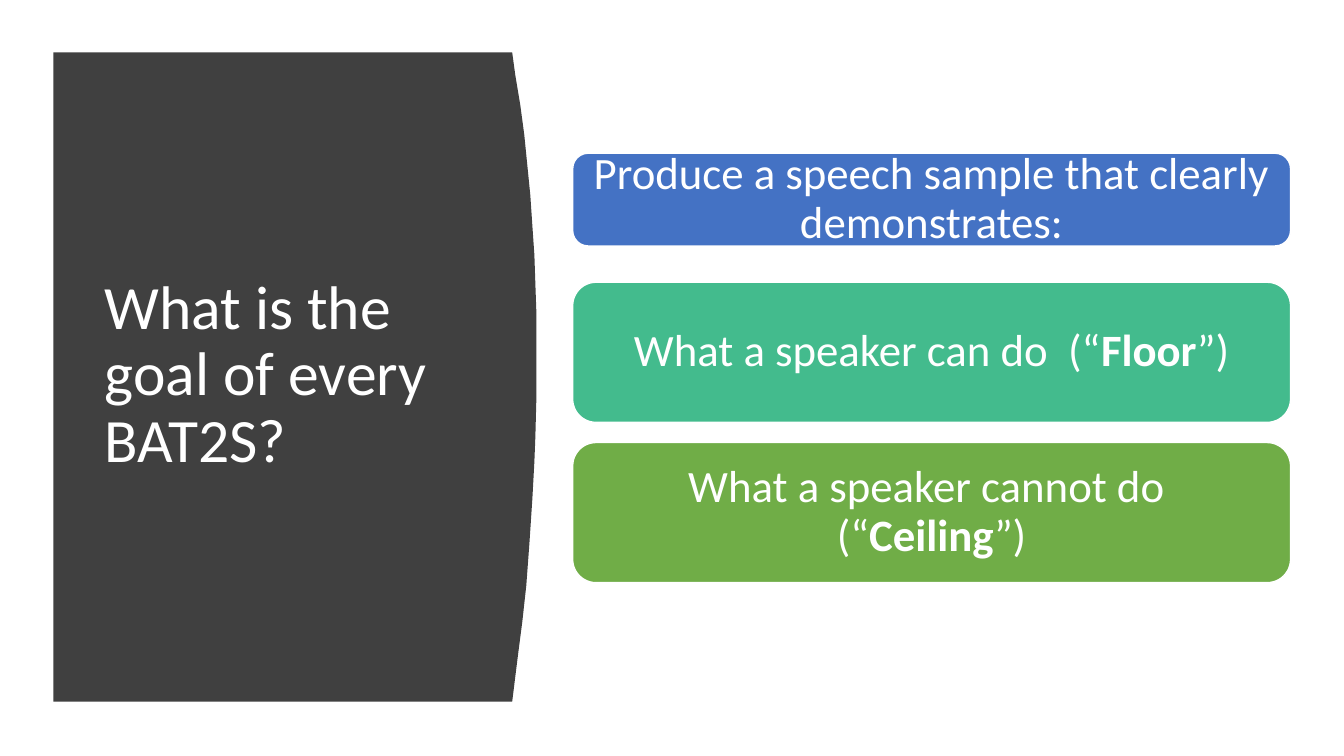
from pptx import Presentation
from pptx.dml.color import RGBColor
from pptx.enum.shapes import MSO_SHAPE
from pptx.enum.text import MSO_ANCHOR, PP_ALIGN
from pptx.util import Pt

PX = 9144  # EMU per px, 100 px to the inch


def color(hex_code):
    return RGBColor.from_string(hex_code)


def write(tf, runs, size, align, margins):
    frame = {"word_wrap": True, "vertical_anchor": MSO_ANCHOR.MIDDLE}
    for side, px in zip(("left", "top", "right", "bottom"), margins):
        frame["margin_" + side] = px * PX
    for name, value in frame.items():
        setattr(tf, name, value)
    p = tf.paragraphs[0]
    p.alignment = align
    p.line_spacing = 0.9
    for text, bold in runs:
        r = p.add_run()
        r.text = text
        for name, value in {"name": "Calibri", "size": Pt(size), "bold": bold}.items():
            setattr(r.font, name, value)
        r.font.color.rgb = color("FFFFFF")


prs = Presentation()
prs.slide_width, prs.slide_height = 1333 * PX, 750 * PX
s = prs.slides.add_slide(prs.slide_layouts[6])

# Dark panel with a bowed right edge
bowed_edge = [
    (508, 52), (511, 74), (516, 104), (520, 134), (523, 164), (526, 194),
    (528, 224), (530, 253), (531, 282), (532, 311), (532, 394), (531, 433),
    (530, 458), (528, 495), (525, 540), (522, 581), (518, 617), (514, 648),
    (511, 672), (508, 696),
]
outline = s.shapes.build_freeform(53, 52, scale=PX)
outline.add_line_segments(bowed_edge + [(53, 696)], close=True)
panel = outline.convert_to_shape()
panel.shadow.inherit = False
panel.fill.solid()
panel.fill.fore_color.rgb = color("404040")
panel.line.fill.background()

# Title
title = s.shapes.add_textbox(94 * PX, 111 * PX, 374 * PX, 524 * PX)
write(title.text_frame, [("What is the goal of every BAT2S?", False)], 44,
      PP_ALIGN.LEFT, (10, 5, 10, 5))

# Goal cards: top, height, fill, runs as (text, bold)
cards = [
    (152, 92, "4472C4", [("Produce a speech sample that clearly demonstrates:", False)]),
    (280, 139, "43BB8D", [("What a speaker can do  (“", False), ("Floor", True), ("”)", False)]),
    (439, 139, "70AD47", [("What a speaker cannot do  (“", False), ("Ceiling", True), ("”)", False)]),
]
for top, height, fill, runs in cards:
    card = s.shapes.add_shape(MSO_SHAPE.ROUNDED_RECTANGLE,
                              568 * PX, top * PX, 712 * PX, height * PX)
    card.shadow.inherit = False
    card.fill.solid()
    card.fill.fore_color.rgb = color(fill)
    card.line.color.rgb = color("FFFFFF")
    card.line.width = Pt(1)
    write(card.text_frame, runs, 32, PP_ALIGN.CENTER, (13, 13, 13, 13))

prs.save("out.pptx")
